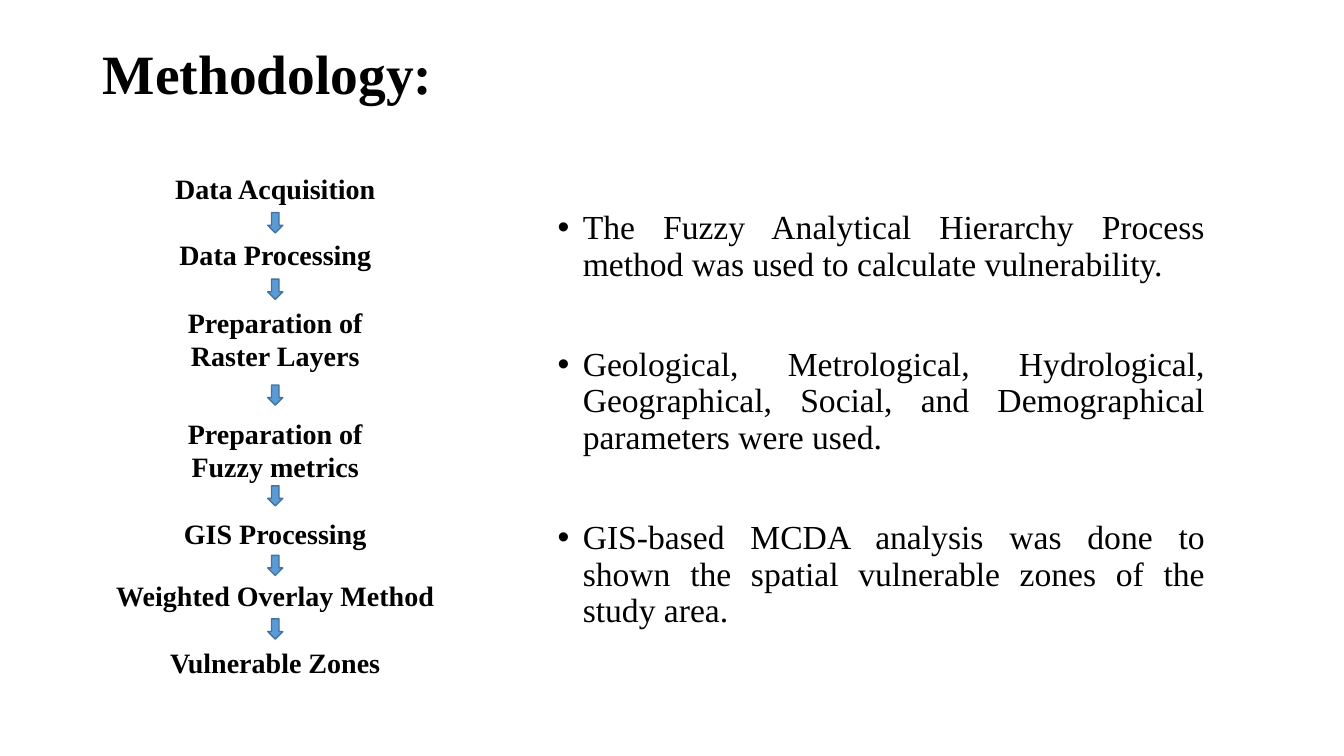
from lxml import etree
from pptx import Presentation
from pptx.dml.color import RGBColor
from pptx.enum.shapes import MSO_SHAPE
from pptx.enum.text import MSO_ANCHOR, MSO_AUTO_SIZE, PP_ALIGN
from pptx.oxml.ns import qn
from pptx.util import Pt

DOWN_ARROW = MSO_SHAPE.DOWN_ARROW
MIDDLE, TOP = MSO_ANCHOR.MIDDLE, MSO_ANCHOR.TOP
LEFT, CENTER, JUSTIFY = PP_ALIGN.LEFT, PP_ALIGN.CENTER, PP_ALIGN.JUSTIFY
NO_FIT = MSO_AUTO_SIZE.NONE

TITLE = "Methodology:"
POINTS = [
    "The Fuzzy Analytical Hierarchy Process method was used to calculate vulnerability.",
    "Geological, Metrological, Hydrological, Geographical, Social, and Demographical "
    "parameters were used.",
    "GIS-based MCDA analysis was done to shown the spatial vulnerable zones of the study area.",
]
# text, top, width, height
STEPS = [
    ("Data Acquisition", 165, 251, 44),
    ("Data Processing", 231, 242, 44),
    ("Preparation of Raster Layers", 298, 219, 77),
    ("Preparation of Fuzzy metrics", 408, 215, 77),
    ("GIS Processing", 508, 236, 44),
    ("Weighted Overlay Method", 569, 374, 44),
    ("Vulnerable Zones", 635, 258, 44),
]
ARROW_TOPS = [211, 277, 382, 482, 551, 614]

COLORS = {"text": "000000", "arrow": "5B9BD5", "arrow_line": "43739E"}
FONT = "Times New Roman"
PX = 9144  # 100 px to the inch
FLOW_CENTER = 273
ARROW_WIDTH, ARROW_HEIGHT = 15, 20
BULLET_INDENT = 25


def px(*lengths):
    return [length * PX for length in lengths]


def color(name):
    return RGBColor.from_string(COLORS[name])


def format_paragraph(para, size, align, bold=False):
    para.alignment = align
    for span in para.runs:
        span.font.name = FONT
        span.font.size = Pt(size)
        span.font.bold = bold
        span.font.color.rgb = color("text")


def place(holder, left, top, width, height, anchor):
    holder.left, holder.top, holder.width, holder.height = px(left, top, width, height)
    holder.text_frame.auto_size = NO_FIT
    holder.text_frame.vertical_anchor = anchor
    return holder.text_frame


def add_bullet(para):
    properties = para._p.get_or_add_pPr()
    properties.set("marL", str(BULLET_INDENT * PX))
    properties.set("indent", str(-BULLET_INDENT * PX))
    etree.SubElement(properties, qn("a:buFont")).set("typeface", "Arial")
    etree.SubElement(properties, qn("a:buChar")).set("char", "•")


def add_title(slide):
    frame = place(slide.shapes.title, 92, 40, 1150, 71, MIDDLE)
    frame.text = TITLE
    para = frame.paragraphs[0]
    para.line_spacing = 0.9
    format_paragraph(para, 39.6, LEFT, bold=True)


def add_points(slide):
    frame = place(slide.placeholders[1], 543, 204, 662, 441, TOP)
    frame.text = "\n".join(POINTS)
    for index, para in enumerate(frame.paragraphs):
        para.line_spacing = 0.9
        para.space_before = Pt(46 if index else 10)
        format_paragraph(para, 24, JUSTIFY)
        add_bullet(para)


def add_flow(slide):
    flow = slide.shapes.add_group_shape()
    for text, top, width, height in STEPS:
        box = flow.shapes.add_textbox(*px(FLOW_CENTER - width / 2, top, width, height))
        box.text_frame.word_wrap = True
        box.text_frame.text = text
        format_paragraph(box.text_frame.paragraphs[0], 20, CENTER, bold=True)
    for top in ARROW_TOPS:
        arrow = flow.shapes.add_shape(
            DOWN_ARROW, *px(FLOW_CENTER - ARROW_WIDTH / 2, top, ARROW_WIDTH, ARROW_HEIGHT))
        arrow.shadow.inherit = False
        arrow.fill.solid()
        arrow.fill.fore_color.rgb = color("arrow")
        arrow.line.color.rgb = color("arrow_line")
        arrow.line.width = Pt(1)


def main():
    deck = Presentation()
    deck.slide_width, deck.slide_height = px(1333, 750)
    slide = deck.slides.add_slide(deck.slide_layouts[1])
    add_title(slide)
    add_points(slide)
    add_flow(slide)
    deck.save("out.pptx")


if __name__ == "__main__":
    main()
